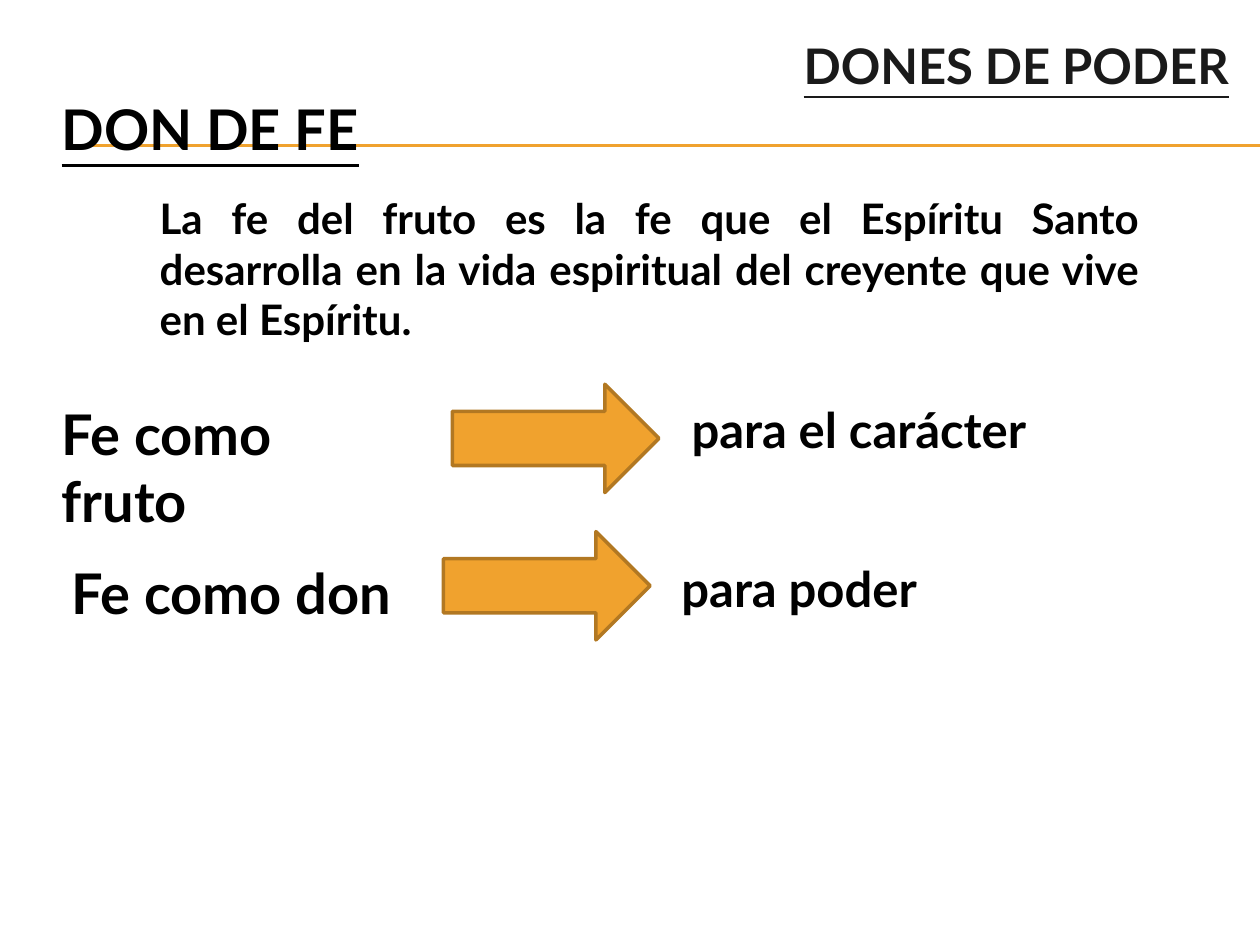
from lxml import etree
from pptx import Presentation
from pptx import util as u
from pptx.dml.color import RGBColor
from pptx.enum import shapes, text
from pptx.oxml.ns import qn

INK = {"title": "1A1A1A", "text": "000000", "gold": "F0A22E", "edge": "B27822"}


class Page:
    def __init__(self, deck, font="Lato"):
        self.slide = deck.slides.add_slide(deck.slide_layouts[6])
        self.font = font

    def tint(self, name):
        return RGBColor.from_string(INK[name])

    def rule(self, left, right, y):
        line = self.slide.shapes.add_connector(
            shapes.MSO_CONNECTOR.STRAIGHT, u.Pt(left), u.Pt(y), u.Pt(right), u.Pt(y))
        line.line.color.rgb = self.tint("gold")
        line.line.width = u.Pt(0.75)
        etree.SubElement(line._element.spPr, qn("a:effectLst"))

    def label(self, words, box, size, ink="text", align="LEFT", anchor="TOP", under=None):
        frame = self.slide.shapes.add_textbox(*map(u.Pt, box)).text_frame
        frame.word_wrap = True
        frame.auto_size = text.MSO_AUTO_SIZE.SHAPE_TO_FIT_TEXT
        frame.vertical_anchor = text.MSO_ANCHOR[anchor]
        frame.text = words
        para = frame.paragraphs[0]
        para.alignment = text.PP_ALIGN[align]
        font = para.runs[0].font
        font.name = self.font
        font.size = u.Pt(size)
        font.bold = True
        font.underline = under
        font.color.rgb = self.tint(ink)

    def arrow(self, box):
        shape = self.slide.shapes.add_shape(
            shapes.MSO_SHAPE.RIGHT_ARROW, *map(u.Pt, box))
        shape.shadow.inherit = False
        shape.fill.solid()
        shape.fill.fore_color.rgb = self.tint("gold")
        shape.line.color.rgb = self.tint("edge")
        shape.line.width = u.Pt(2)


def main():
    deck = Presentation()
    deck.slide_width, deck.slide_height = u.Pt(720), u.Pt(540)
    page = Page(deck)

    for y in (82.8, 83.5):
        page.rule(40.3, 720, y)

    page.label("DONES DE PODER", (427.7, 16.6, 281.5, 41), 28, "title", "RIGHT", "MIDDLE", True)
    page.label("DON DE FE", (28.1, 50.4, 292.3, 46), 32,
               align="JUSTIFY", anchor="MIDDLE", under=True)
    page.label("La fe del fruto es la fe que el Espíritu Santo desarrolla en la vida "
               "espiritual del creyente que vive en el Espíritu.",
               (84.2, 106.6, 573.8, 94.3), 24, align="JUSTIFY")

    # Each row: cause, left and width; arrow left and top; effect, left and width; text top
    rows = [
        ("Fe como fruto", 28.1, 206.6, 258.5, 219.6, "para el carácter", 388.1, 240.5, 224.6),
        ("Fe como don", 33.8, 200.9, 253.4, 303.8, "para poder", 382.3, 173.5, 315.4),
    ]
    for cause, left, wide, tail, high, effect, start, span, top in rows:
        page.label(cause, (left, top, wide, 46), 32)
        page.arrow((tail, high, 118.1, 61.9))
        page.label(effect, (start, top, span, 41), 28)

    deck.save("out.pptx")


if __name__ == "__main__":
    main()
